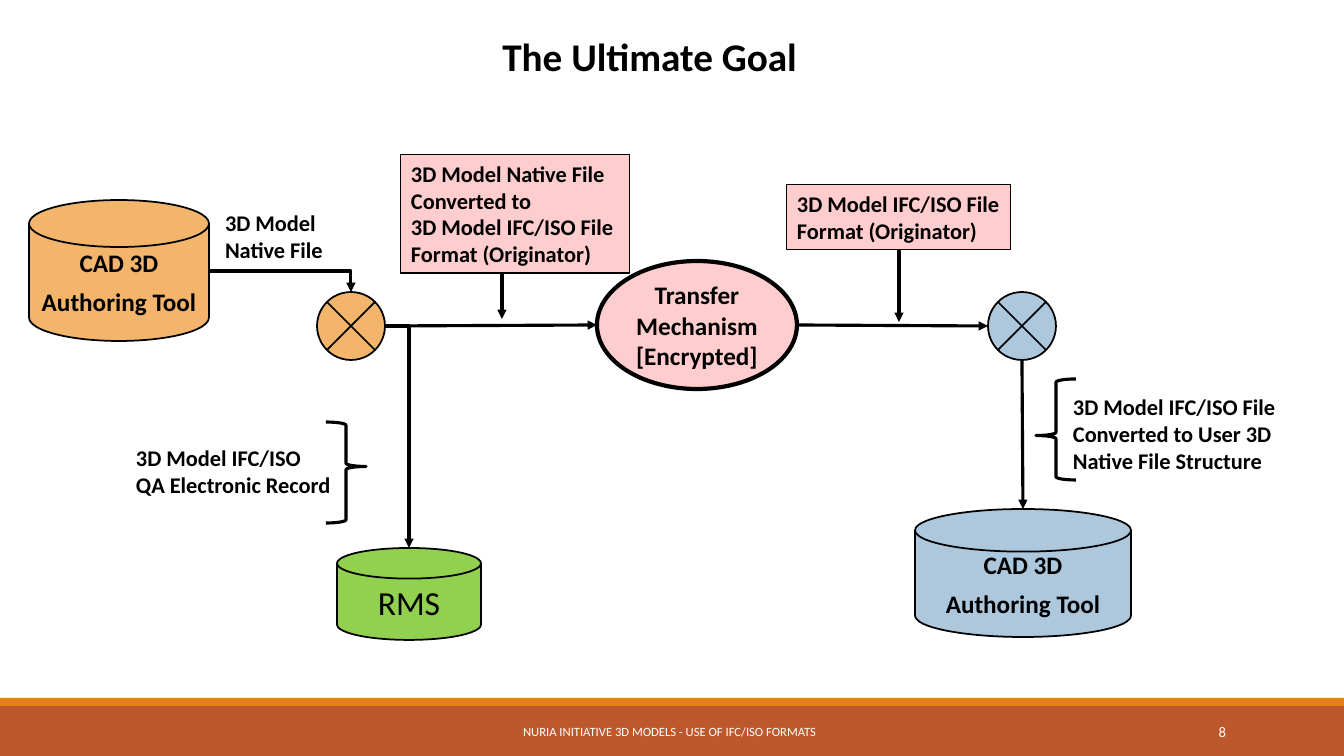
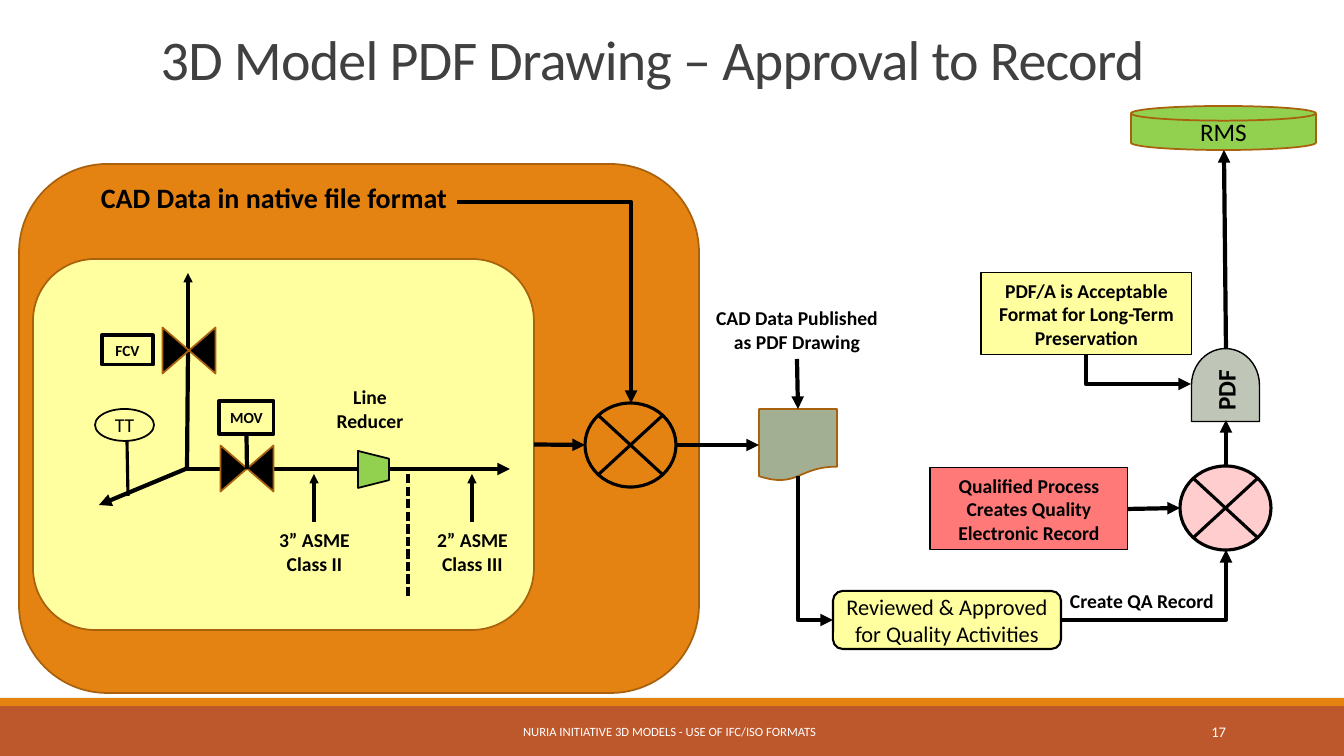
from lxml.etree import SubElement
from pptx import Presentation
from pptx.dml.color import RGBColor
from pptx.enum.dml import MSO_LINE
from pptx.enum.shapes import MSO_CONNECTOR as Route, MSO_SHAPE as Kind
from pptx.enum.text import MSO_ANCHOR as Anchor, PP_ALIGN as Align
from pptx.oxml.ns import qn
from pptx.util import Emu, Pt

COLORS = {
    "black": "000000", "white": "FFFFFF", "title": "404040",
    "rust": "BD582C", "orange": "E48312", "brown": "A9610D",
    "peach": "F3B56C", "blue": "ADC8DD", "pink": "FFCDCD", "red": "FF7979",
    "green": "92D050", "yellow": "FFFF9F", "sage": "A2AF92", "grey": "BFC6B8",
}
FONT = "Calibri"
FOOTER = "NURIA INITIATIVE 3D MODELS - USE OF IFC/ISO FORMATS"
TOP, LEFT, BOTTOM, RIGHT = range(4)


def px(n):
    return Emu(round(n * 914400 / 100.8))


def rgb(name):
    return RGBColor.from_string(COLORS[name])


class Deck:
    def __init__(self):
        self.prs = Presentation()
        self.prs.slide_width, self.prs.slide_height = px(1344), px(756)
        self.shapes = None

    def slide(self, number):
        self.shapes = self.prs.slides.add_slide(self.prs.slide_layouts[6]).shapes
        self.shape(Kind.RECTANGLE, 0, 706, 1344, 50, "rust", None)
        self.shape(Kind.RECTANGLE, 0, 698, 1344, 8, "orange", None)
        self.label(406, 712, 527, 40, FOOTER, 9, bold=False, color="white",
                   anchor=Anchor.MIDDLE)
        self.label(1092, 712, 144, 40, number, 10.5, Align.RIGHT, False, "white",
                   Anchor.MIDDLE)

    def set_text(self, holder, text, size, align, bold, color="black", inset=10):
        frame = holder.text_frame
        frame.text = text
        frame.word_wrap = True
        frame.margin_left = frame.margin_right = px(inset)
        frame.margin_top = frame.margin_bottom = px(inset // 2)
        for paragraph in frame.paragraphs:
            paragraph.alignment = align
            for run in paragraph.runs:
                run.font.name, run.font.size, run.font.bold = FONT, Pt(size), bold
                run.font.color.rgb = rgb(color)
        return frame

    def label(self, x, y, w, h, text, size=14, align=Align.CENTER, bold=True,
              color="black", anchor=Anchor.TOP):
        holder = self.shapes.add_textbox(px(x), px(y), px(w), px(h))
        frame = self.set_text(holder, text, size, align, bold, color)
        frame.vertical_anchor = anchor
        return frame

    def title(self, x, y, w, h, text, size, bold, color, leading=1.0, tracking=0):
        frame = self.label(x, y, w, h, text, size, bold=bold, color=color,
                           anchor=Anchor.BOTTOM)
        line = frame.paragraphs[0]
        line.line_spacing = leading
        line.runs[0].font._element.set("spc", str(tracking))

    def shape(self, kind, x, y, w, h, fill=None, line="black", weight=1.25,
              rotation=0, adjust=()):
        shape = self.shapes.add_shape(kind, px(x), px(y), px(w), px(h))
        shape.shadow.inherit = False
        shape.rotation = rotation
        for index, value in enumerate(adjust):
            shape.adjustments[index] = value
        if fill:
            shape.fill.solid()
            shape.fill.fore_color.rgb = rgb(fill)
        else:
            shape.fill.background()
        if line:
            shape.line.color.rgb = rgb(line)
            shape.line.width = Pt(weight)
        else:
            shape.line.fill.background()
        return shape

    def note(self, x, y, w, h, text, fill, size=14, align=Align.CENTER):
        note = self.shape(Kind.RECTANGLE, x, y, w, h, fill, weight=0.75)
        self.set_text(note, text, size, align, True)
        return note

    def disk(self, x, y, w, h, text, fill, size=18, bold=False, line="black", gap=0):
        disk = self.shape(Kind.FLOWCHART_MAGNETIC_DISK, x, y, w, h, fill, line)
        frame = self.set_text(disk, text, size, Align.CENTER, bold, inset=0)
        for paragraph in frame.paragraphs[1:]:
            paragraph.space_before = Pt(gap)

    def junction(self, x, y, w, h, fill=None, weight=1.25):
        self.shape(Kind.FLOWCHART_SUMMING_JUNCTION, x, y, w, h, fill, weight=weight)

    def finish_line(self, connector, weight, arrow, dashed=False):
        connector.line.color.rgb = rgb("black")
        connector.line.width = Pt(weight)
        if dashed:
            connector.line.dash_style = MSO_LINE.SQUARE_DOT
        outline = connector._element.spPr
        if arrow:
            SubElement(outline.find(qn("a:ln")), qn("a:tailEnd"), type="triangle")
        SubElement(outline, qn("a:effectLst"))

    def link(self, x1, y1, x2, y2, weight=3, arrow=True, dashed=False,
             begin=None, end=None):
        link = self.shapes.add_connector(Route.STRAIGHT, px(x1), px(y1), px(x2), px(y2))
        if begin:
            link.begin_connect(*begin)
        if end:
            link.end_connect(*end)
        self.finish_line(link, weight, arrow, dashed)

    def elbow(self, x1, y1, x2, y2, weight=3, down_first=False):
        ends = x1, y1, x2, y2
        if down_first:
            mid_x, mid_y = (x1 + x2) / 2, (y1 + y2) / 2
            half_w, half_h = (y2 - y1) / 2, (x2 - x1) / 2
            ends = mid_x - half_w, mid_y - half_h, mid_x + half_w, mid_y + half_h
        elbow = self.shapes.add_connector(Route.ELBOW, *map(px, ends))
        outline = elbow._element.spPr
        outline.find(qn("a:prstGeom")).set("prst", "bentConnector2")
        if down_first:
            frame = outline.find(qn("a:xfrm"))
            frame.set("rot", "16200000")
            frame.set("flipH", "1")
        self.finish_line(elbow, weight, True)


def goal_slide(deck):
    deck.slide("8")
    deck.title(373, 27, 553, 57, "The Ultimate Goal", 28, True, "black")

    for x, y, w, h, fill in ((29, 200, 180, 141, "peach"), (915, 509, 216, 128, "blue")):
        deck.disk(x, y, w, h, "CAD 3D\nAuthoring Tool", fill, bold=True, gap=6)
    deck.disk(337, 548, 144, 92, "RMS", "green", 24)
    for x, fill in ((317, "peach"), (988, "blue")):
        deck.junction(x, 292, 68, 68, fill)

    transfer = deck.shape(Kind.OVAL, 597, 261, 200, 128, "pink", weight=3)
    deck.set_text(transfer, "Transfer Mechanism\n[Encrypted]", 18, Align.CENTER, True,
                  inset=0)

    deck.note(401, 154, 229, 119,
              "3D Model Native File Converted to\n3D Model IFC/ISO File Format (Originator)",
              "pink", 16, Align.LEFT)
    received = deck.note(787, 185, 224, 65, "3D Model IFC/ISO File Format (Originator)",
                         "pink", 16, Align.LEFT)
    for x, y, w, h, text in (
        (215, 204, 119, 65, "3D Model\nNative File"),
        (126, 439, 222, 65, "3D Model IFC/ISO\nQA Electronic Record"),
        (1063, 388, 234, 92, "3D Model IFC/ISO File Converted to User 3D\nNative File Structure"),
    ):
        deck.label(x, y, w, h, text, 16, Align.LEFT)

    for kind, x, y, tip in ((Kind.RIGHT_BRACE, 326, 422, 0.44),
                            (Kind.LEFT_BRACE, 1036, 379, 0.56)):
        deck.shape(kind, x, y, 40, 101, weight=2.25, adjust=(0.08, tip))

    deck.elbow(209, 271, 351, 292, 2.25)
    deck.elbow(385, 326, 409, 548, 2.25)
    for ends in ((385, 326, 597, 325), (797, 325, 988, 326),
                 (1022, 360, 1023, 509), (502, 273, 502, 319)):
        deck.link(*ends, weight=2.25)
    deck.link(899, 250, 899, 322, 2.25, begin=(received, BOTTOM))


def piping(deck):
    deck.link(188, 351, 187, 470, arrow=False)
    deck.link(188, 468, 99, 505)
    deck.link(221, 469, 187, 469, arrow=False)
    deck.link(274, 469, 358, 469, arrow=False)
    deck.link(389, 469, 510, 469)
    deck.link(127, 441, 128, 496, 2.25, arrow=False)
    deck.link(188, 351, 188, 273, 2.25)
    for x, y in ((224, 442), (166, 324)):
        deck.shape(Kind.FLOWCHART_COLLATE, x, y, 46, 53, "black", "brown", rotation=90)
    deck.shape(Kind.TRAPEZOID, 355, 454, 37, 31, "green", rotation=90)

    sensor = deck.shape(Kind.OVAL, 95, 409, 59, 32, "yellow")
    deck.set_text(sensor, "TT", 14, Align.CENTER, False, inset=0)
    tags = {}
    for x, y, w, h, name in ((219, 401, 55, 33, "MOV"), (102, 335, 51, 30, "FCV")):
        tags[name] = deck.shape(Kind.RECTANGLE, x, y, w, h, weight=2.25)
        deck.set_text(tags[name], name, 11, Align.CENTER, True, inset=0)
    deck.link(247, 469, 247, 434, arrow=False, end=(tags["MOV"], BOTTOM))

    deck.label(326, 380, 88, 58, "Line\nReducer")
    for x, text in ((266, "3” ASME\nClass II"), (424, "2” ASME\nClass III")):
        deck.label(x, 523, 97, 58, text)
    for x in (314, 472):
        deck.link(x, 522, x, 474, 2.25)
    deck.link(408, 474, 408, 597, 2.25, arrow=False, dashed=True)


def record_slide(deck):
    deck.slide("17")
    deck.title(80, 20, 1145, 77, "3D Model PDF Drawing – Approval to Record",
               40, False, "title", 0.85, -50)
    deck.shape(Kind.FLOWCHART_ALTERNATE_PROCESS, 19, 164, 680, 529, "orange", "brown")
    model = deck.shape(Kind.ROUNDED_RECTANGLE, 33, 259, 501, 371, "yellow", "brown")
    piping(deck)

    deck.label(86, 175, 376, 44, "CAD Data in native file format", 20)
    deck.junction(585, 403, 91, 84, weight=2.25)
    deck.elbow(457, 202, 631, 403)
    deck.link(534, 445, 585, 445, begin=(model, RIGHT))

    drawing = deck.shape(Kind.FLOWCHART_DOCUMENT, 759, 409, 78, 72, "sage", "brown")
    deck.label(704, 301, 186, 58, "CAD Data Published\nas PDF Drawing")
    deck.link(676, 445, 759, 445, end=(drawing, LEFT))
    deck.link(797, 359, 798, 409, end=(drawing, TOP))

    review = deck.shape(Kind.ROUNDED_RECTANGLE, 833, 591, 228, 58, "yellow", weight=1.5)
    deck.set_text(review, "Reviewed & Approved for Quality Activities", 16,
                  Align.CENTER, False, inset=6)
    deck.elbow(798, 476, 833, 620, down_first=True)
    deck.elbow(1061, 620, 1226, 550)
    deck.label(1056, 584, 172, 34, "Create QA Record")

    deck.junction(1180, 466, 91, 84, "pink", 2.25)
    qualified = deck.note(930, 468, 198, 82,
                          "Qualified Process Creates Quality Electronic Record", "red")
    deck.link(1128, 509, 1180, 508, begin=(qualified, RIGHT))
    deck.note(981, 273, 211, 82,
              "PDF/A is Acceptable Format for Long-Term Preservation", "yellow")
    deck.elbow(1086, 355, 1191, 384, down_first=True)

    pdf = deck.shape(Kind.FLOWCHART_DELAY, 1189, 351, 73, 68, "grey", weight=1, rotation=270)
    deck.set_text(pdf, "PDF", 18, Align.CENTER, True, inset=0)
    deck.disk(1131, 106, 185, 44, "RMS", "green", line="brown")
    deck.link(1226, 466, 1226, 420)
    deck.link(1226, 348, 1224, 150)


def main():
    deck = Deck()
    goal_slide(deck)
    record_slide(deck)
    deck.prs.save("out.pptx")


if __name__ == "__main__":
    main()
